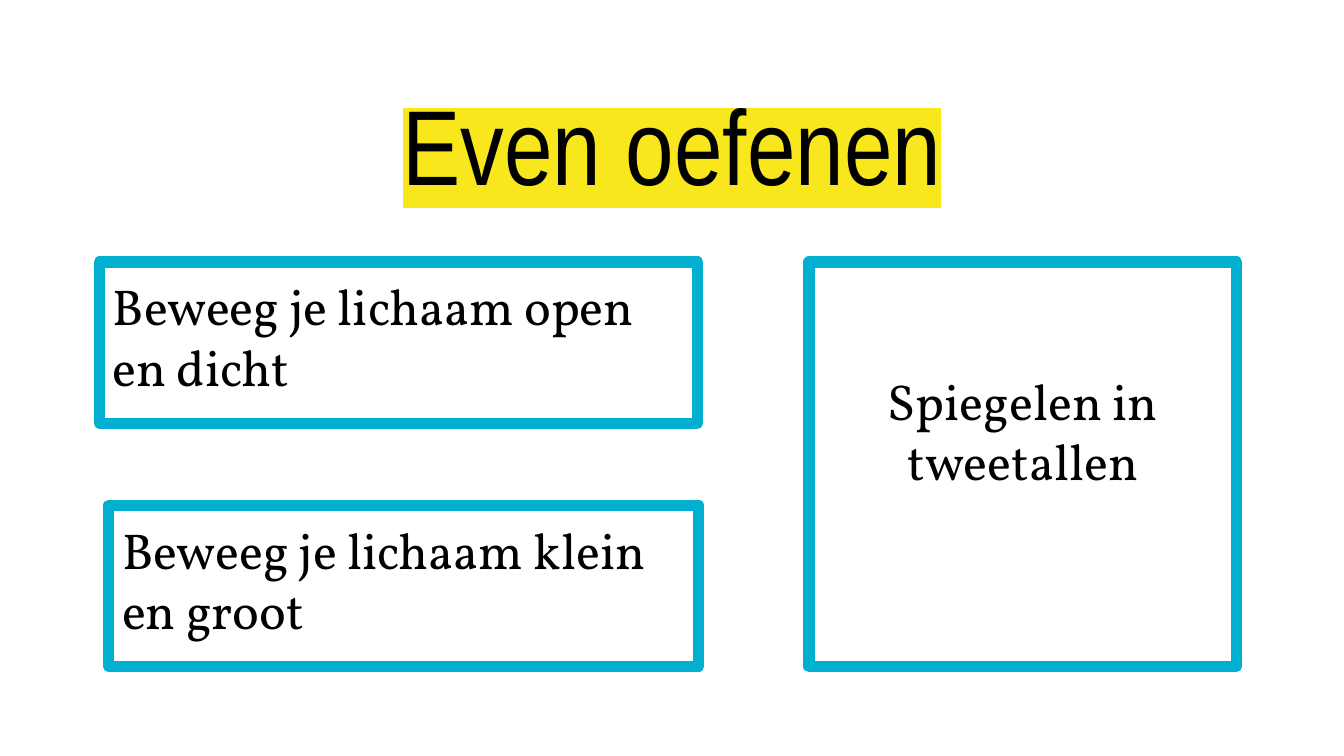
from lxml.etree import SubElement
from pptx import Presentation
from pptx.dml.color import RGBColor
from pptx.enum.shapes import MSO_SHAPE
from pptx.enum.text import MSO_ANCHOR, MSO_AUTO_SIZE, PP_ALIGN
from pptx.oxml.ns import qn
from pptx.util import Inches, Pt

COLORS = {"text": "000000", "highlight": "F8E71C", "border": "01AFD1"}
FRAME = {
    "word_wrap": True,
    "auto_size": MSO_AUTO_SIZE.NONE,
    "margin_left": Inches(0.1),
    "margin_right": Inches(0.1),
    "margin_top": Inches(0.1),
    "margin_bottom": Inches(0.1),
    "vertical_anchor": MSO_ANCHOR.TOP,
}


def add_text(shape, text, name, size, align, frame):
    tf = shape.text_frame
    for key, value in frame.items():
        setattr(tf, key, value)
    p = tf.paragraphs[0]
    p.alignment = align
    r = p.add_run()
    r.text = text
    r.font.color.rgb = RGBColor.from_string(COLORS["text"])
    for key, value in {"name": name, "size": Pt(size)}.items():
        setattr(r.font, key, value)
    return r


prs = Presentation()
prs.slide_width, prs.slide_height = Inches(10), Inches(10 * 9 / 16)
s = prs.slides.add_slide(prs.slide_layouts[5])

title = s.shapes.title
place = {"left": 0.34, "top": 0.49, "width": 9.32, "height": 0.63}
for key, value in place.items():
    setattr(title, key, Inches(value))
r = add_text(title, "Even oefenen", "Arial Narrow", 57, PP_ALIGN.CENTER, FRAME)
latin = r.font._element.find(qn("a:latin"))
highlight = SubElement(r.font._element, qn("a:highlight"))
SubElement(highlight, qn("a:srgbClr"), val=COLORS["highlight"])
latin.addprevious(highlight)

mirror_frame = FRAME | {"margin_top": Inches(0.8)}
exercises = [
    ("Beweeg je lichaam open en dicht", (0.74, 1.95, 4.45, 1.2), PP_ALIGN.LEFT, FRAME),
    ("Beweeg je lichaam klein en groot", (0.81, 3.76, 4.39, 1.2), PP_ALIGN.LEFT, FRAME),
    ("Spiegelen in tweetallen", (6.02, 1.95, 3.18, 3.01), PP_ALIGN.CENTER, mirror_frame),
]
for text, box, align, frame in exercises:
    sp = s.shapes.add_shape(MSO_SHAPE.RECTANGLE, *[Inches(v) for v in box])
    sp.shadow.inherit = False
    sp.fill.background()
    sp.line.color.rgb = RGBColor.from_string(COLORS["border"])
    sp.line.width = Pt(6)
    SubElement(sp.line._get_or_add_ln(), qn("a:round"))
    add_text(sp, text, "Vollkorn", 27, align, frame)

prs.save("out.pptx")
